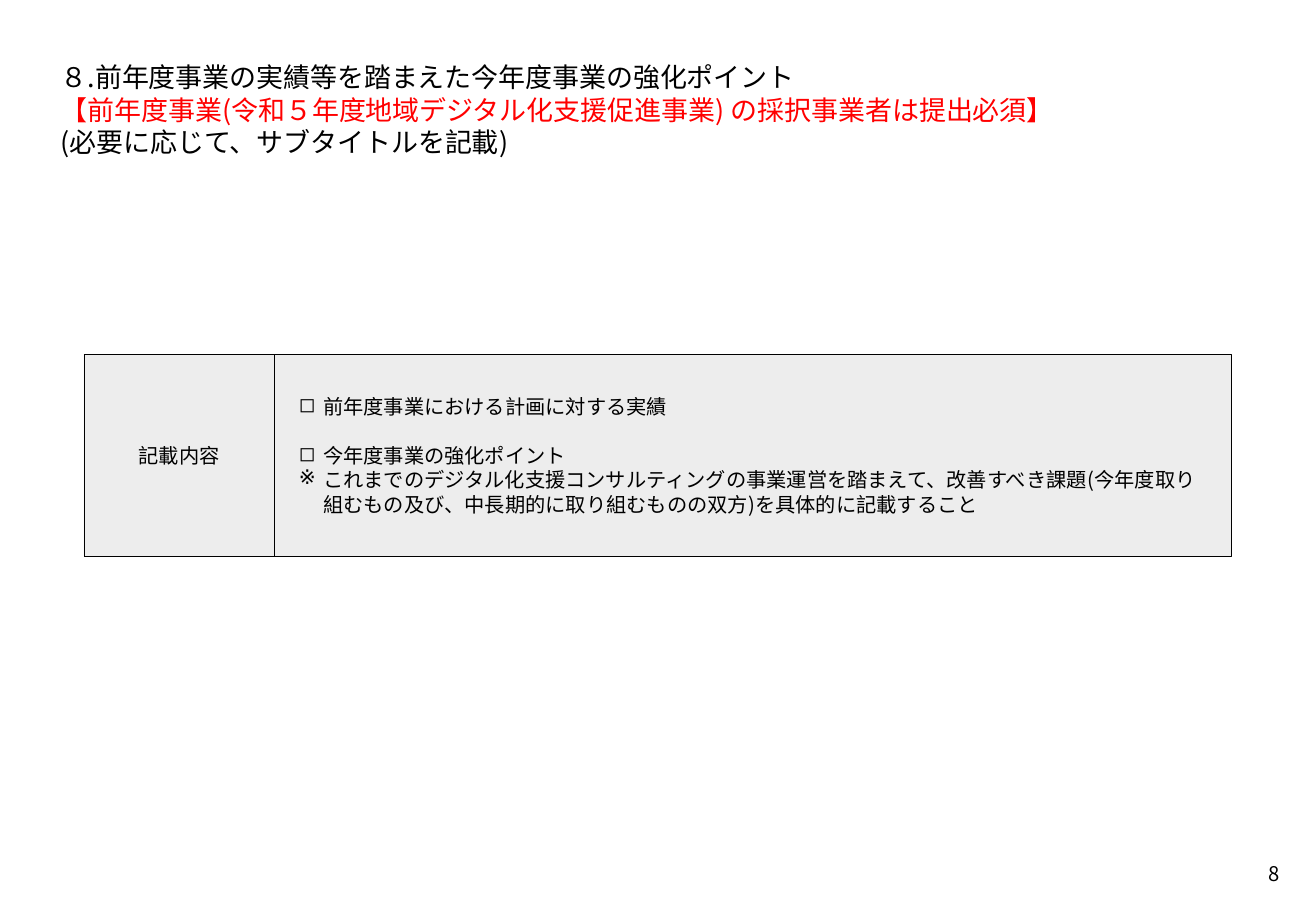
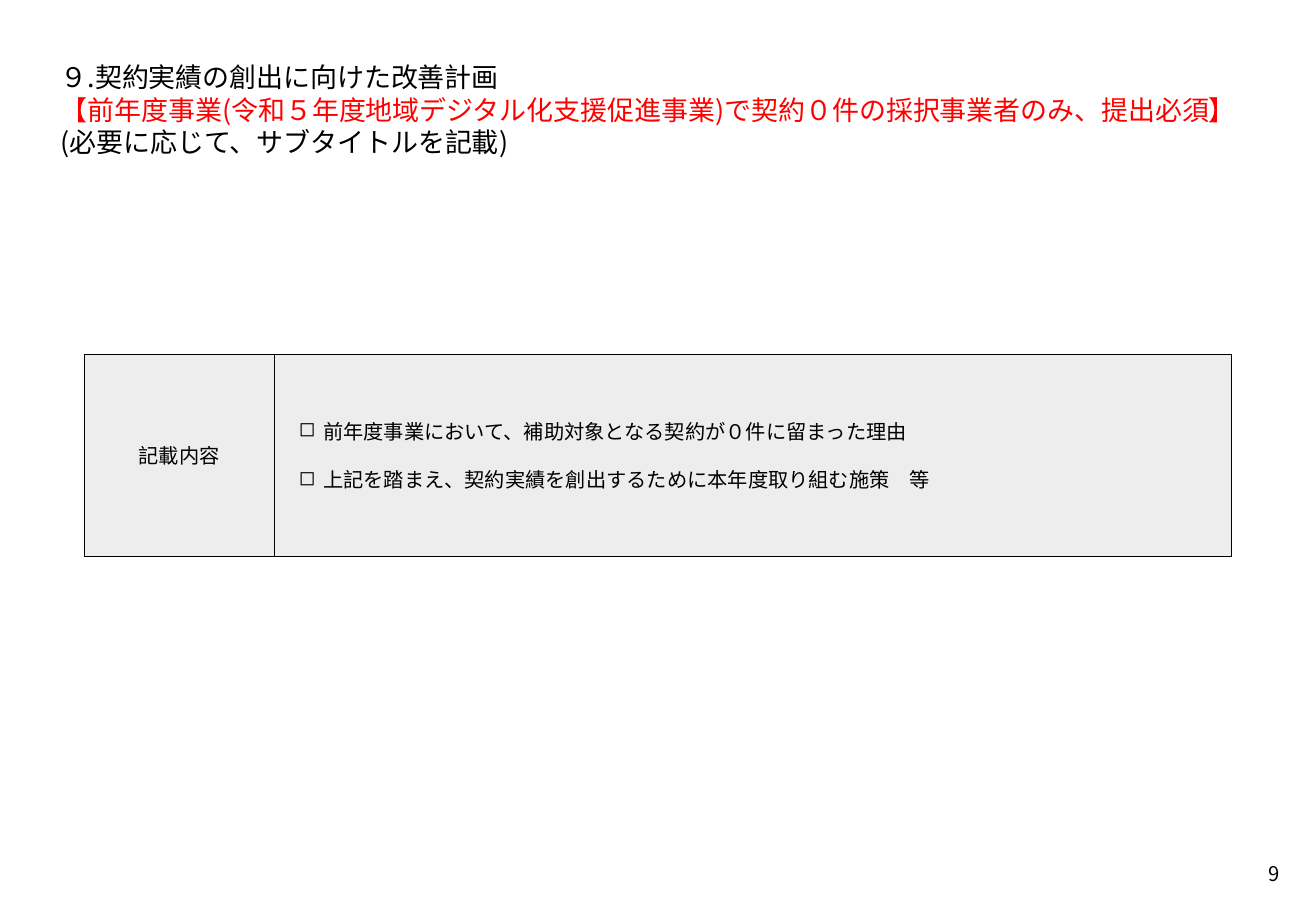
"""Builds two proposal slides, each with a three-line title and a box of required contents."""
from lxml import etree
from pptx import Presentation
from pptx.dml.color import RGBColor
from pptx.enum.dml import MSO_LINE
from pptx.enum.shapes import MSO_SHAPE
from pptx.enum.text import MSO_ANCHOR, PP_ALIGN
from pptx.oxml.ns import qn
from pptx.util import Pt

PX = 9144
FONT = "Noto Sans CJK JP"
BLACK, RED, GREY = "000000", "FF0000", "EDEDED"
TITLE_SIZE, BODY_SIZE = 16, 12
LINE_RATIO = 1.2
BOX_TOP, BOX_HEIGHT = 292, 166
LEFT, CENTER, RIGHT = PP_ALIGN.LEFT, PP_ALIGN.CENTER, PP_ALIGN.RIGHT
TOP, MIDDLE = MSO_ANCHOR.TOP, MSO_ANCHOR.MIDDLE
RECTANGLE, DOTTED = MSO_SHAPE.RECTANGLE, MSO_LINE.ROUND_DOT
SUBTITLE = "(必要に応じて、サブタイトルを記載)"

PAGES = [
    {
        "number": "8",
        "title": "８.前年度事業の実績等を踏まえた今年度事業の強化ポイント",
        "notice": "【前年度事業(令和５年度地域デジタル化支援促進事業) の採択事業者は提出必須】",
        "items": [
            ("◻", "前年度事業における計画に対する実績"),
            ("◻", "今年度事業の強化ポイント"),
            ("※", "これまでのデジタル化支援コンサルティングの事業運営を踏まえて、改善すべき課題"
                  "(今年度取り組むもの及び、中長期的に取り組むものの双方)を具体的に記載すること"),
        ],
    },
    {
        "number": "9",
        "title": "９.契約実績の創出に向けた改善計画",
        "notice": "【前年度事業(令和５年度地域デジタル化支援促進事業)で契約０件の採択事業者のみ、提出必須】",
        "items": [
            ("◻", "前年度事業において、補助対象となる契約が０件に留まった理由"),
            ("◻", "上記を踏まえ、契約実績を創出するために本年度取り組む施策　等"),
        ],
    },
]


def color(hex_text):
    return RGBColor.from_string(hex_text)


def write(box, lines, size, align=LEFT, anchor=TOP, inset=20):
    """Fill a box with lines of (text, colour, bullet)."""
    frame = box.text_frame
    frame.word_wrap = True
    frame.vertical_anchor = anchor
    frame.margin_left = frame.margin_right = inset * PX
    frame.margin_top = frame.margin_bottom = inset * PX
    for index, (text, ink, bullet) in enumerate(lines):
        para = frame.add_paragraph() if index else frame.paragraphs[0]
        para.alignment = align
        para.line_spacing = Pt(size * LINE_RATIO)
        if bullet:
            if index and bullet == "◻":
                para.space_before = Pt(size * LINE_RATIO)
            properties = para._p.get_or_add_pPr()
            properties.set("marL", str(20 * PX))
            properties.set("indent", str(-20 * PX))
            etree.SubElement(properties, qn("a:buChar")).set("char", bullet)
        span = para.add_run()
        span.text = text
        span.font.size = Pt(size)
        span.font.name = FONT
        span.font.color.rgb = color(ink)
        etree.SubElement(span._r.get_or_add_rPr(), qn("a:ea")).set("typeface", FONT)


deck = Presentation()
deck.slide_width, deck.slide_height = 1083 * PX, 750 * PX

for content in PAGES:
    page = deck.slides.add_slide(deck.slide_layouts[6])

    title = page.shapes.add_textbox(30 * PX, 30 * PX, 1024 * PX, 79 * PX)
    title_lines = [(content["title"], BLACK, ""), (content["notice"], RED, ""), (SUBTITLE, BLACK, "")]
    write(title, title_lines, TITLE_SIZE)

    number = page.shapes.add_textbox(1024 * PX, 699 * PX, 39 * PX, 39 * PX)
    write(number, [(content["number"], BLACK, "")], BODY_SIZE, RIGHT, inset=10)

    items = [(text, BLACK, bullet) for bullet, text in content["items"]]
    cells = [
        (226, 787, items, LEFT, 20),
        (69, 157, [("記載内容", BLACK, "")], CENTER, 5),
    ]
    group = page.shapes.add_group_shape()
    for left, width, lines, align, inset in cells:
        cell = group.shapes.add_shape(RECTANGLE, left * PX, BOX_TOP * PX, width * PX, BOX_HEIGHT * PX)
        cell.shadow.inherit = False
        cell.fill.solid()
        cell.fill.fore_color.rgb = color(GREY)
        cell.line.color.rgb = color(BLACK)
        cell.line.width = Pt(0.25)
        cell.line.dash_style = DOTTED
        write(cell, lines, BODY_SIZE, align, MIDDLE, inset)

deck.save("out.pptx")
